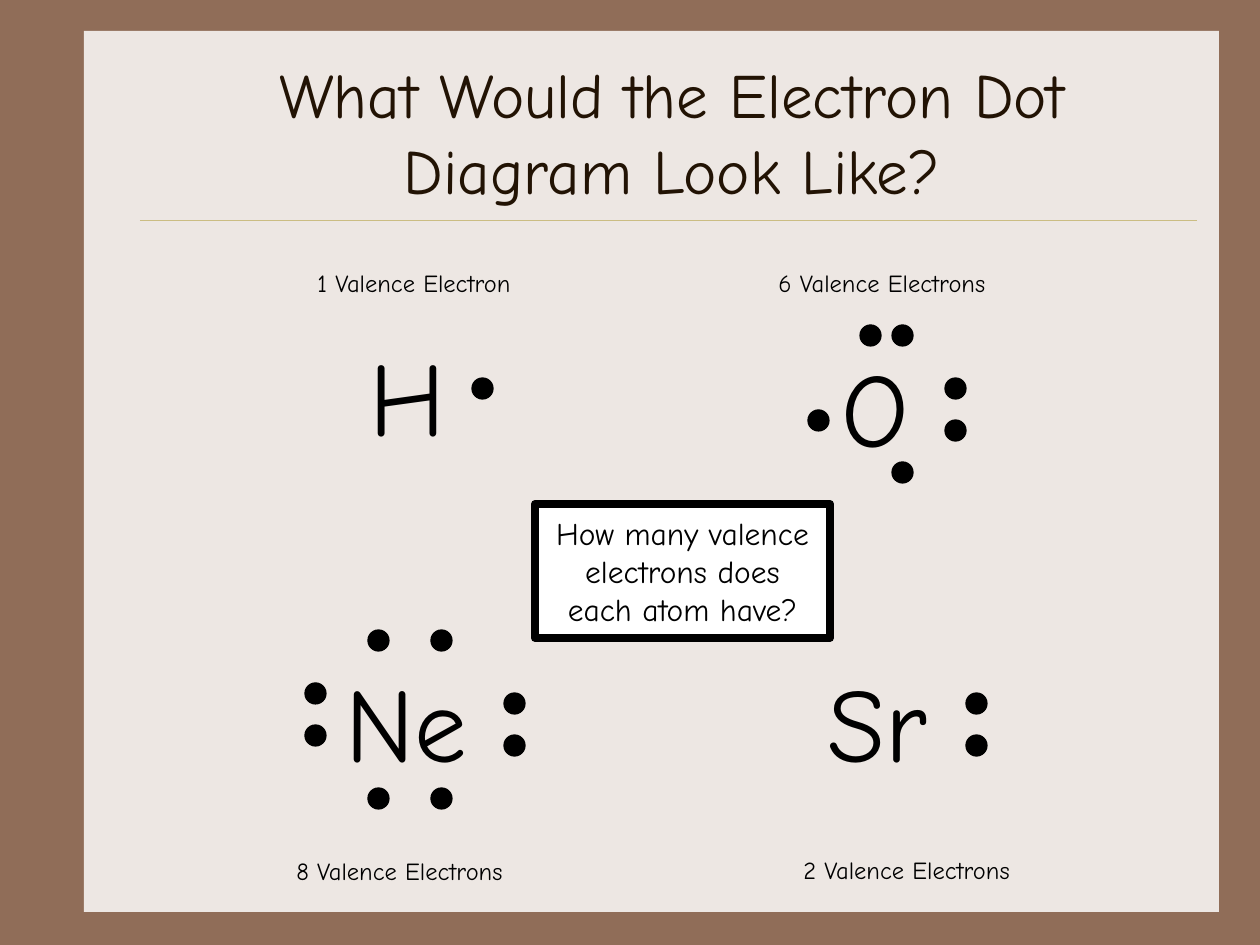
from lxml.etree import SubElement
from pptx import Presentation
from pptx.dml.color import RGBColor
from pptx.enum.shapes import MSO_CONNECTOR as Connector, MSO_SHAPE as Shape
from pptx.enum.text import MSO_ANCHOR as Anchor, MSO_AUTO_SIZE as AutoSize, PP_ALIGN as Align
from pptx.oxml.ns import qn
from pptx.util import Emu, Pt

BROWN = RGBColor(0x90, 0x6D, 0x58)
CREAM = RGBColor(0xED, 0xE7, 0xE3)
GOLD = RGBColor(0xCB, 0xBD, 0x83)
DARK = RGBColor(0x22, 0x13, 0x04)
BLACK = RGBColor(0, 0, 0)
WHITE = RGBColor(0xFF, 0xFF, 0xFF)

FONT = "Comic Neue"
EMU_PER_PX = 914400 / 126
DOT = 21

# symbol, its box, valence label, its box, top left corners of the electrons
ATOMS = [
    ("H", (357, 325, 106, 139), "1 Valence Electron", (305, 262, 236, 42),
     [(472, 378)]),
    ("O", (829, 336, 110, 139), "6 Valence Electrons", (766, 262, 252, 42),
     [(860, 325), (892, 325), (945, 378), (945, 420), (892, 462), (808, 410)]),
    ("Ne", (333, 651, 166, 139), "8 Valence Electrons", (284, 850, 252, 42),
     [(368, 630), (431, 630), (504, 693), (504, 735),
      (431, 788), (368, 788), (305, 725), (305, 683)]),
    ("Sr", (815, 651, 149, 139), "2 Valence Electrons", (791, 849, 252, 42),
     [(966, 693), (966, 735)]),
]


def px(*lengths):
    return [Emu(round(length * EMU_PER_PX)) for length in lengths]


class SlideBuilder:
    def __init__(self, presentation):
        self.slide = presentation.slides.add_slide(presentation.slide_layouts[5])
        self.shapes = self.slide.shapes

    def background(self, color):
        fill = self.slide.background.fill
        fill.solid()
        fill.fore_color.rgb = color

    def add_lines(self, frame, lines, size, color, align):
        for index, line in enumerate(lines):
            paragraph = frame.add_paragraph() if index else frame.paragraphs[0]
            paragraph.alignment = align
            run = paragraph.add_run()
            run.text = line
            run.font.name = FONT
            run.font.size = Pt(size)
            run.font.color.rgb = color

    def title(self, text, box, size):
        title = self.shapes.title
        title.left, title.top, title.width, title.height = px(*box)
        frame = title.text_frame
        frame.word_wrap = True
        frame.auto_size = AutoSize.NONE
        frame.vertical_anchor = Anchor.MIDDLE
        self.add_lines(frame, [text], size, DARK, Align.CENTER)
        # Bring the title in front of the panel
        title.element.getparent().append(title.element)

    def shape(self, kind, box, fill, line=None, width=0.75):
        shape = self.shapes.add_shape(kind, *px(*box))
        shape.shadow.inherit = False
        shape.fill.solid()
        shape.fill.fore_color.rgb = fill
        if line is None:
            shape.line.fill.background()
        else:
            shape.line.color.rgb = line
            shape.line.width = Pt(width)
        return shape

    def rule(self, start, end, color, width):
        line = self.shapes.add_connector(Connector.STRAIGHT, *px(*start, *end))
        line.line.color.rgb = color
        line.line.width = Pt(width)
        SubElement(line.element.spPr, qn("a:effectLst"))

    def fit_text(self, shape, lines, size, align):
        frame = shape.text_frame
        frame.word_wrap = False
        frame.auto_size = AutoSize.SHAPE_TO_FIT_TEXT
        self.add_lines(frame, lines, size, BLACK, align)

    def text(self, text, box, size):
        self.fit_text(self.shapes.add_textbox(*px(*box)), [text], size, Align.LEFT)

    def electron(self, left, top):
        self.shape(Shape.OVAL, (left, top, DOT, DOT), BLACK, BLACK)

    def callout(self, lines, box, size):
        shape = self.shape(Shape.RECTANGLE, box, WHITE, BLACK, 4.5)
        self.fit_text(shape, lines, size, Align.CENTER)


def main():
    presentation = Presentation()
    presentation.slide_width, presentation.slide_height = px(1260, 945)
    builder = SlideBuilder(presentation)

    # Frame and heading
    builder.background(BROWN)
    builder.shape(Shape.RECTANGLE, (84, 31, 1135, 881), CREAM)
    builder.rule((140, 220), (1197, 220), GOLD, 0.25)
    builder.title("What Would the Electron Dot Diagram Look Like?",
                  (147, 53, 1050, 157), 36)

    # Electron dot diagrams
    for symbol, symbol_box, label, label_box, electrons in ATOMS:
        builder.text(symbol, symbol_box, 60)
        for left, top in electrons:
            builder.electron(left, top)
        builder.text(label, label_box, 14)

    # Question in the middle
    builder.callout(["How many valence", "electrons does", "each atom have?"],
                    (535, 504, 295, 134), 18)

    presentation.save("out.pptx")


if __name__ == "__main__":
    main()
